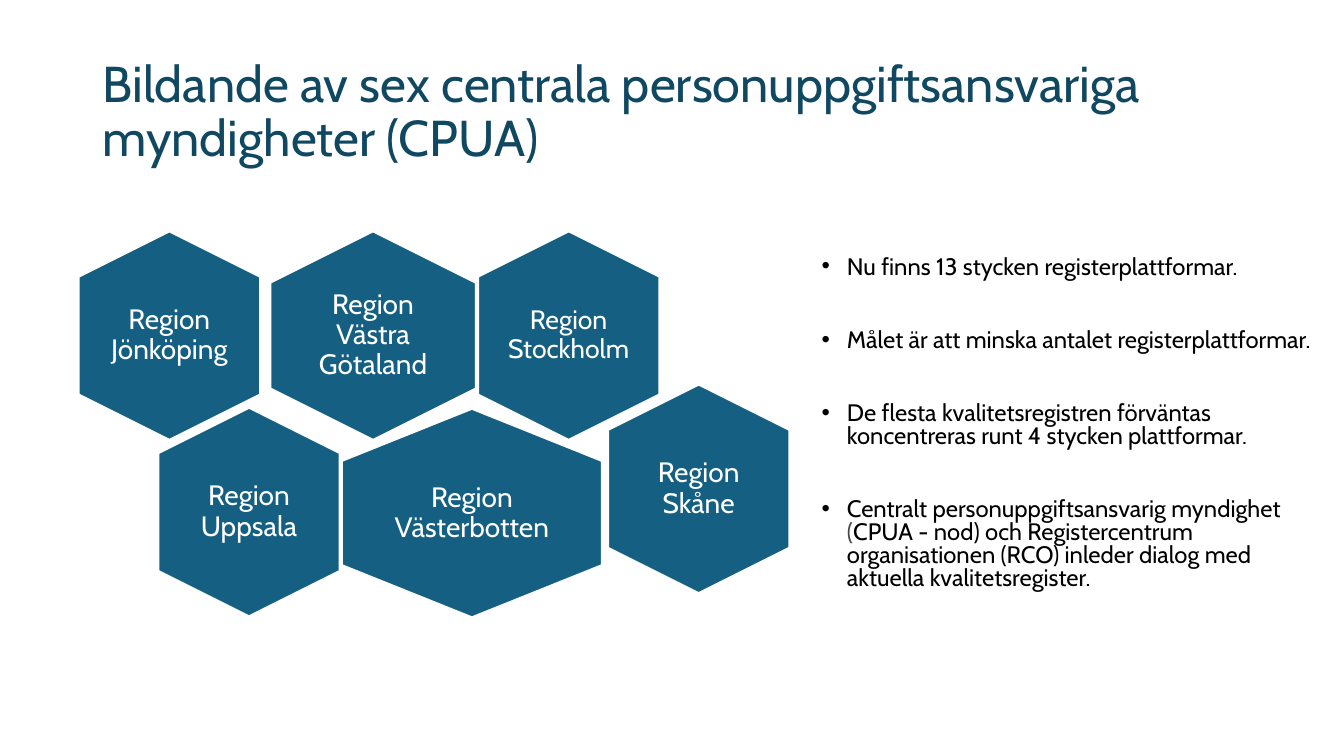
import pptx
import pptx.util
import pptx.dml.color
import pptx.enum.shapes
import pptx.enum.text
from pptx.util import Inches

COLOURS = {
    "title": "104862",
    "hexagon": "156082",
    "white": "FFFFFF",
    "body": "000000",
    "bracket": "474747",
}
FONT = "Cabin"
HEXAGON_HEIGHT = 2.07

# name, centre x, centre y, width, label width, label inset, size
REGIONS = [
    ("Region Skåne", 6.15, 2.55, 1.8, 1.24, 0.08, 20),
    ("Region Jönköping", 0.9, 1.03, 1.8, 1.24, 0, 20),
    ("Region Västra Götaland", 2.92, 1.03, 2.04, 1.36, 0.08, 20),
    ("Region Stockholm", 4.86, 1.03, 1.8, 1.24, 0, 19),
    ("Region Västerbotten", 3.9, 2.79, 2.58, 1.72, 0.08, 20),
    ("Region Uppsala", 1.69, 2.78, 1.8, 1.24, 0, 20),
]

POINTS = [
    ["Nu finns 13 stycken registerplattformar."],
    ["Målet är att minska antalet registerplattformar."],
    ["De flesta kvalitetsregistren förväntas koncentreras runt 4 stycken plattformar."],
    [
        "Centralt personuppgiftsansvarig myndighet ",
        "(",
        "CPUA - nod) och Registercentrum organisationen (RCO) inleder dialog med "
        "aktuella kvalitetsregister.",
    ],
]


def colour(name):
    """Return the named colour."""
    return pptx.dml.color.RGBColor.from_string(COLOURS[name])


def style_run(run, size, colour_name):
    """Set the font of one run."""
    run.font.name = FONT
    run.font.size = pptx.util.Pt(size)
    run.font.color.rgb = colour(colour_name)


def place(part, left, top, width, height):
    """Move a part to the given box in inches."""
    part.left, part.top = Inches(left), Inches(top)
    part.width, part.height = Inches(width), Inches(height)


def add_heading(slide, left, top, width, height):
    """Fill the title placeholder."""
    heading = slide.shapes.title
    place(heading, left, top, width, height)
    frame = heading.text_frame
    frame.text = "Bildande av sex centrala personuppgiftsansvariga myndigheter (CPUA)"
    frame.auto_size = pptx.enum.text.MSO_AUTO_SIZE.NONE
    frame.vertical_anchor = pptx.enum.text.MSO_ANCHOR.MIDDLE
    paragraph = frame.paragraphs[0]
    paragraph.alignment = pptx.enum.text.PP_ALIGN.LEFT
    paragraph.line_spacing = 0.9
    style_run(paragraph.runs[0], 36, "title")


def add_region(shapes, name, centre_x, centre_y, width, label_width, inset, size):
    """Add one upright hexagon with its label."""
    hexagon = shapes.add_shape(
        pptx.enum.shapes.MSO_SHAPE.HEXAGON,
        Inches(centre_x - HEXAGON_HEIGHT / 2), Inches(centre_y - width / 2),
        Inches(HEXAGON_HEIGHT), Inches(width),
    )
    hexagon.rotation = 90
    hexagon.adjustments[0] = 0.25
    hexagon.shadow.inherit = False
    hexagon.fill.solid()
    hexagon.fill.fore_color.rgb = colour("hexagon")
    hexagon.line.color.rgb = colour("white")
    hexagon.line.width = pptx.util.Pt(1.5)

    label_height = 1.4
    label = shapes.add_textbox(
        Inches(centre_x - label_width / 2), Inches(centre_y - label_height / 2),
        Inches(label_width), Inches(label_height),
    )
    frame = label.text_frame
    frame.text = name
    frame.word_wrap = True
    frame.vertical_anchor = pptx.enum.text.MSO_ANCHOR.MIDDLE
    frame.margin_left = frame.margin_right = Inches(inset)
    frame.margin_top = frame.margin_bottom = Inches(inset)
    paragraph = frame.paragraphs[0]
    paragraph.alignment = pptx.enum.text.PP_ALIGN.CENTER
    paragraph.line_spacing = 0.9
    style_run(paragraph.runs[0], size, "white")


def add_region_map(slide, left, top):
    """Add the group of region hexagons."""
    region_map = slide.shapes.add_group_shape()
    for name, x, y, *measures in REGIONS:
        add_region(region_map.shapes, name, left + x, top + y, *measures)


def add_points(slide, left, top, width, height):
    """Fill the body placeholder with the bullet points."""
    points = slide.placeholders[1]
    place(points, left, top, width, height)
    frame = points.text_frame
    frame.text = "\n".join("".join(pieces) for pieces in POINTS)
    frame.auto_size = pptx.enum.text.MSO_AUTO_SIZE.NONE
    for index, (paragraph, pieces) in enumerate(zip(frame.paragraphs, POINTS)):
        paragraph.line_spacing = 0.8
        paragraph.space_before = pptx.util.Pt(36 if index else 0)
        properties = paragraph._p.get_or_add_pPr()
        properties.set("marL", str(Inches(0.25)))
        properties.set("indent", str(Inches(-0.25)))
        paragraph.runs[0].text = pieces[0]
        for piece in pieces[1:]:
            paragraph.add_run().text = piece
        for run in paragraph.runs:
            style_run(run, 17, "bracket" if run.text == "(" else "body")


def main():
    """Build and save the slide."""
    deck = pptx.Presentation()
    deck.slide_width, deck.slide_height = Inches(13.33), Inches(7.5)
    slide = deck.slides.add_slide(deck.slide_layouts[1])
    slide.background.fill.solid()
    slide.background.fill.fore_color.rgb = colour("white")
    add_heading(slide, 0.92, 0.4, 11.5, 1.45)
    add_region_map(slide, 0.78, 2.3)
    add_points(slide, 8.05, 2.5, 5.28, 3.63)
    deck.save("out.pptx")


if __name__ == "__main__":
    main()
